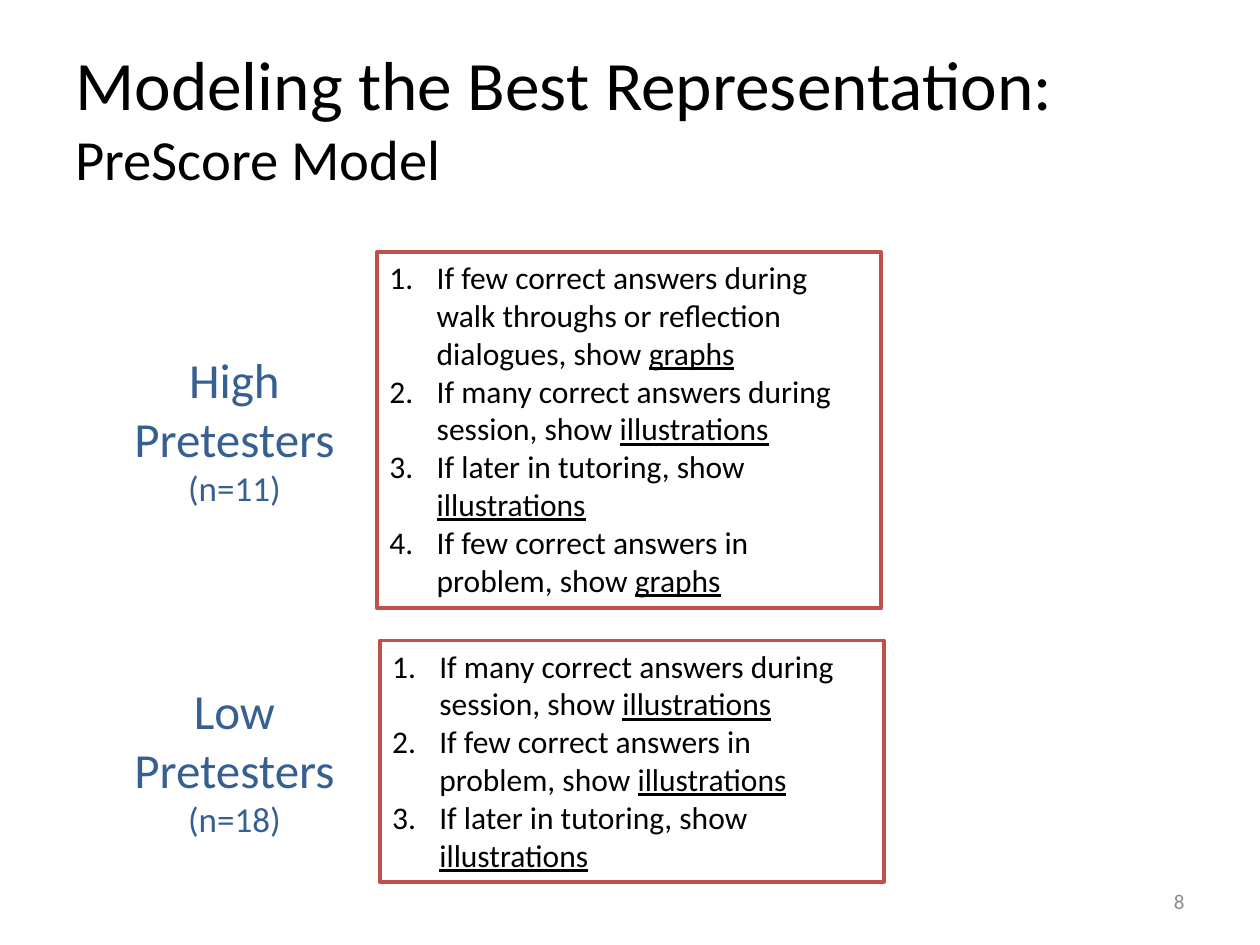
from pptx import Presentation
from pptx import util as u
from pptx.dml.color import RGBColor
from pptx.enum import shapes, text
from lxml import etree

Pt = u.Pt
INK = {"black": "000000", "blue": "376092", "red": "C0504D", "gray": "8C8C8C"}
ALIGN = text.PP_ALIGN
MID = text.MSO_ANCHOR.MIDDLE
TOP = text.MSO_ANCHOR.TOP


def put(obj, **vals):
    for key, val in vals.items():
        setattr(obj, key, val)


class Deck:
    font = "Calibri"

    def __init__(self, wide, high):
        self.prs = Presentation()
        put(self.prs, slide_width=Pt(wide), slide_height=Pt(high))
        self.slide = self.prs.slides.add_slide(self.prs.slide_layouts[6])

    def run(self, para, words, size, color="black", line=None):
        """Add words to a paragraph; a closing newline becomes a line break."""
        run = para.add_run()
        run.text = words.rstrip("\n")
        put(run.font, name=self.font, size=Pt(size), underline=line)
        run.font.color.rgb = RGBColor.from_string(INK[color])
        if words.endswith("\n"):
            para.add_line_break()

    def paras(self, frame, count):
        return [frame.paragraphs[0]] + [frame.add_paragraph() for _ in range(count - 1)]

    def label(self, area, paras, color="black", align=ALIGN.LEFT, anchor=TOP):
        """Place a text box; each paragraph is a list of (words, size)."""
        frame = self.slide.shapes.add_textbox(*map(Pt, area)).text_frame
        put(frame, word_wrap=True, vertical_anchor=anchor)
        for para, runs in zip(self.paras(frame, len(paras)), paras):
            para.alignment = align
            for words, size in runs:
                self.run(para, words, size, color)

    def rules(self, area, items):
        """Place a framed numbered list; each item is (condition, shown form)."""
        box = self.slide.shapes.add_shape(shapes.MSO_SHAPE.RECTANGLE, *map(Pt, area))
        box.shadow.inherit = False
        box.fill.background()
        box.line.color.rgb = RGBColor.from_string(INK["red"])
        box.line.width = Pt(2.25)
        frame = box.text_frame
        put(frame, word_wrap=True, vertical_anchor=TOP)
        for para, (cond, form) in zip(self.paras(frame, len(items)), items):
            para.alignment = ALIGN.LEFT
            self.number(para)
            self.run(para, f"{cond}, show ", 18)
            self.run(para, form, 18, line=True)

    def number(self, para):
        props = para._p.get_or_add_pPr()
        props.set("marL", str(Pt(27)))
        props.set("indent", str(-Pt(27)))
        ns = "{http://schemas.openxmlformats.org/drawingml/2006/main}"
        etree.SubElement(props, ns + "buFont", typeface="+mj-lt")
        etree.SubElement(props, ns + "buAutoNum", type="arabicPeriod")


def main():
    deck = Deck(720, 540)
    deck.label((36, 21.6, 648, 90),
               [[("Modeling the Best Representation:\n", 39.6), ("PreScore Model", 32.4)]],
               anchor=MID)
    deck.label((516, 500.5, 168, 28.75), [[("8", 12)]], "gray", ALIGN.RIGHT, MID)

    many = "If many correct answers during session"
    few = "If few correct answers in problem"
    late = "If later in tutoring"
    pics, graphs = "illustrations", "graphs"
    groups = [
        ("High Pretesters", "(n=11)", 196, (215.5, 144, 288, 203.6), [
            ("If few correct answers during walk throughs or reflection dialogues", graphs),
            (many, pics), (late, pics), (few, graphs)]),
        ("Low Pretesters", "(n=18)", 385.2, (217, 366, 288, 138), [
            (many, pics), (few, pics), (late, pics)]),
    ]
    for name, count, top, area, items in groups:
        deck.label((62, top, 144, 99.4), [[(name, 28)], [(count, 20)]], "blue", ALIGN.CENTER)
        deck.rules(area, items)
    deck.prs.save("out.pptx")


if __name__ == "__main__":
    main()
